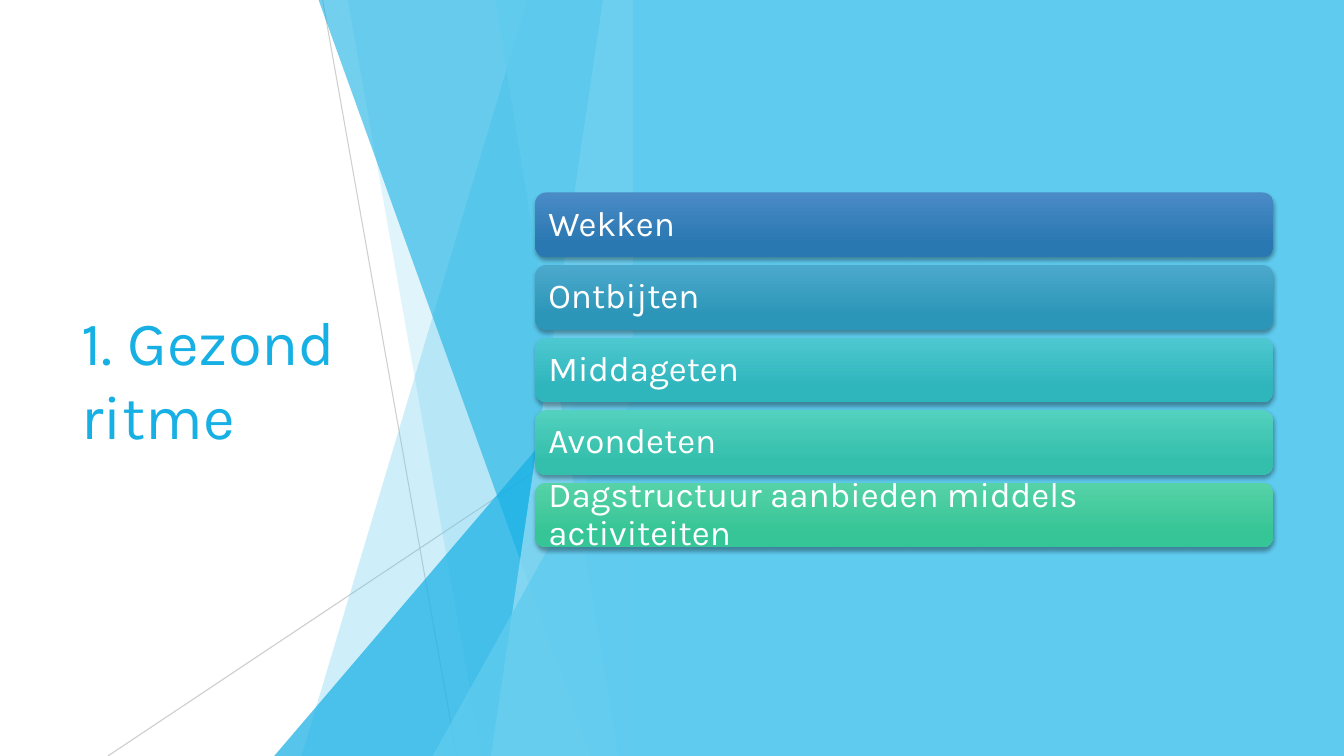
from lxml import etree
from pptx import Presentation
from pptx.dml.color import RGBColor
from pptx.enum import shapes, text
from pptx.oxml import ns
from pptx.util import Inches, Pt

WHITE = RGBColor(0xFF, 0xFF, 0xFF)
GREY = RGBColor(0xBF, 0xBF, 0xBF)
SKY = RGBColor(0x5F, 0xCB, 0xEF)
BLUE = RGBColor(0x17, 0xB0, 0xE4)
PALE = RGBColor(0x9F, 0xE0, 0xF5)
FONT = "Karla"
WIDTH, HEIGHT, PANEL_LEFT = 13.33, 7.5, 6.28

TITLE = "1. Gezond ritme"
STEPS = [
    ("Wekken", "4A8BC6", "2A78B2"),
    ("Ontbijten", "4BA9CC", "2C96B8"),
    ("Middageten", "4DC8D0", "2FB5BC"),
    ("Avondeten", "52D1BE", "34BFAC"),
    ("Dagstructuur aanbieden middels activiteiten", "56D2A7", "36C596"),
]
RAYS = [((3.2, 0), (4.53, HEIGHT), 75), ((PANEL_LEFT, 4.03), (1.07, HEIGHT), 80)]
FACETS = [
    ("band", 5.23, 2.99, SKY, 30),
    ("band", 3.45, 4.78, SKY, 20),
    ("triangle", 3.33, 2.72, BLUE, 72),
    ("band", 3.16, 5.86, BLUE, 60),
    ("band", 5.98, 4.87, PALE, 70),
    ("band", 4.91, 6.13, SKY, 65),
    ("triangle", 3.93, 4.29, SKY, 80),
]
BAR_LEFT, BAR_TOP, BAR_WIDTH, BAR_HEIGHT, BAR_PITCH = 5.31, 1.91, 7.32, 0.64, 0.72


def add_child(parent, tag, **attributes):
    return etree.SubElement(parent, ns.qn(tag), attributes)


def set_opacity(shape, percent):
    for color in shape._element.spPr.iter(ns.qn("a:srgbClr")):
        add_child(color, "a:alpha", val=str(percent * 1000))


def add_ray(page, start, end, opacity):
    ray = page.shapes.add_connector(
        shapes.MSO_CONNECTOR.STRAIGHT, *[Inches(v) for v in start + end])
    ray.line.color.rgb = GREY
    ray.line.width = Pt(0.75)
    set_opacity(ray, opacity)
    add_child(ray._element.spPr, "a:effectLst")


def add_preset(page, kind, left, top, width, height):
    shape = page.shapes.add_shape(kind, *[Inches(v) for v in (left, top, width, height)])
    shape.shadow.inherit = False
    shape.line.fill.background()
    return shape


def add_band(page, top_x, bottom_x):
    builder = page.shapes.build_freeform(Inches(top_x), 0)
    corners = [(PANEL_LEFT, 0), (PANEL_LEFT, HEIGHT), (bottom_x, HEIGHT)]
    builder.add_line_segments([(Inches(x), Inches(y)) for x, y in corners])
    band = builder.convert_to_shape()
    band.shadow.inherit = False
    band.line.fill.background()
    return band


def add_facet(page, kind, first, second, color, opacity):
    if kind == "band":
        facet = add_band(page, first, second)
    else:
        facet = add_preset(page, shapes.MSO_SHAPE.ISOSCELES_TRIANGLE,
                           second, first, PANEL_LEFT - second, HEIGHT - first)
        facet.adjustments[0] = 1
    facet.fill.solid()
    facet.fill.fore_color.rgb = color
    set_opacity(facet, opacity)


def add_shadow(shape):
    effects = shape._element.spPr.find(ns.qn("a:effectLst"))
    shadow = add_child(effects, "a:outerShdw", blurRad=str(Pt(3)), dist=str(Pt(2)),
                       dir="5400000", rotWithShape="0")
    color = add_child(shadow, "a:srgbClr", val="000000")
    add_child(color, "a:alpha", val="35000")


def add_step(page, index, label, start, end):
    bar = add_preset(page, shapes.MSO_SHAPE.ROUNDED_RECTANGLE, BAR_LEFT,
                     BAR_TOP + index * BAR_PITCH, BAR_WIDTH, BAR_HEIGHT)
    bar.fill.gradient()
    bar.fill.gradient_angle = 270
    for stop, position, color in zip(bar.fill.gradient_stops, (0, 0.78), (start, end)):
        stop.position = position
        stop.color.rgb = RGBColor.from_string(color)
    add_shadow(bar)
    frame = bar.text_frame
    frame.word_wrap = True
    frame.vertical_anchor = text.MSO_ANCHOR.MIDDLE
    frame.margin_left = frame.margin_right = Inches(0.1)
    frame.margin_top = frame.margin_bottom = Inches(0.1)
    write(frame, label, 25, WHITE)
    frame.paragraphs[0].line_spacing = 0.9


def write(frame, words, size, color):
    frame.text = words
    para = frame.paragraphs[0]
    para.alignment = text.PP_ALIGN.LEFT
    para.font.name = FONT
    para.font.size = Pt(size)
    para.font.color.rgb = color


def add_title(page):
    title = page.shapes.title
    title.left, title.top = Inches(0.71), Inches(1.51)
    title.width, title.height = Inches(3.88), Inches(4.48)
    frame = title.text_frame
    frame.word_wrap = True
    frame.auto_size = text.MSO_AUTO_SIZE.NONE
    frame.vertical_anchor = text.MSO_ANCHOR.MIDDLE
    write(frame, TITLE, 44, BLUE)


def main():
    deck = Presentation()
    deck.slide_width, deck.slide_height = Inches(WIDTH), Inches(HEIGHT)
    page = deck.slides.add_slide(deck.slide_layouts[5])
    add_title(page)
    for ray in RAYS:
        add_ray(page, *ray)
    for facet in FACETS:
        add_facet(page, *facet)
    panel = add_preset(page, shapes.MSO_SHAPE.RECTANGLE,
                       PANEL_LEFT, 0, WIDTH - PANEL_LEFT, HEIGHT)
    panel.fill.solid()
    panel.fill.fore_color.rgb = SKY
    for index, step in enumerate(STEPS):
        add_step(page, index, *step)
    deck.save("out.pptx")


if __name__ == "__main__":
    main()
